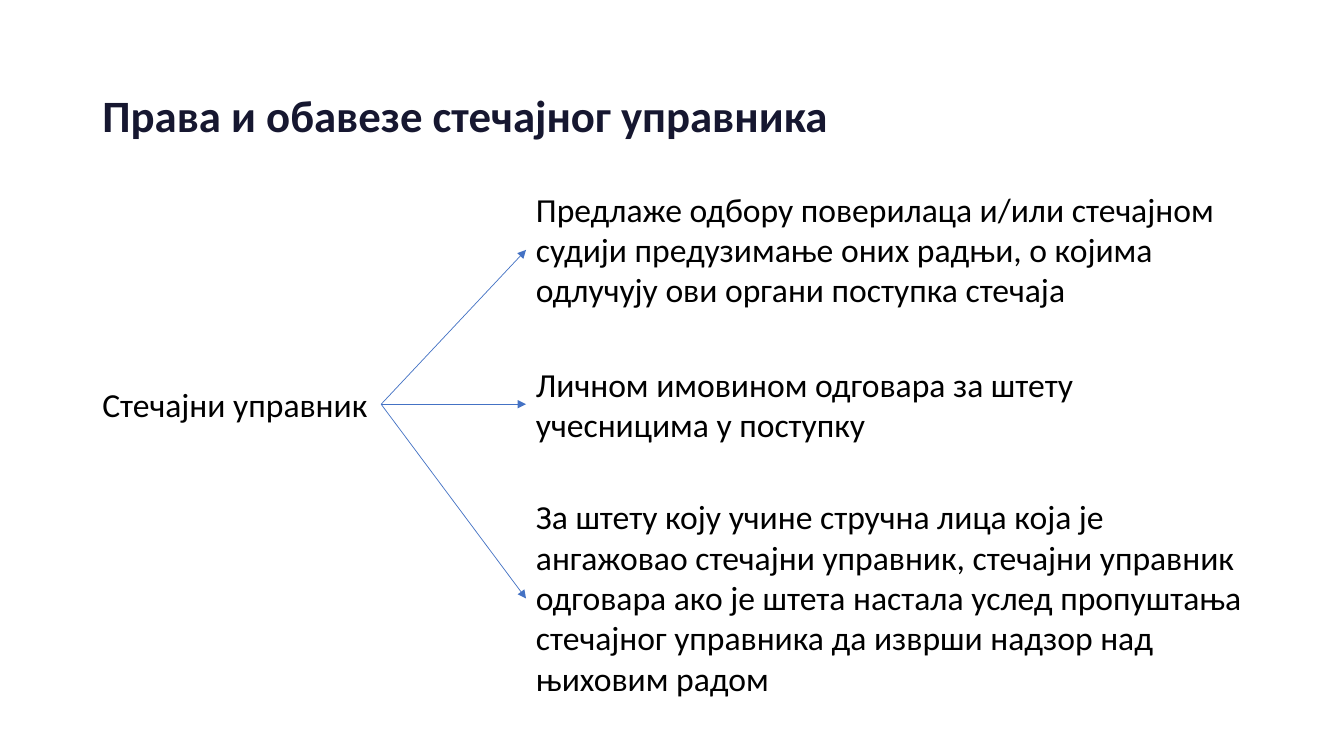
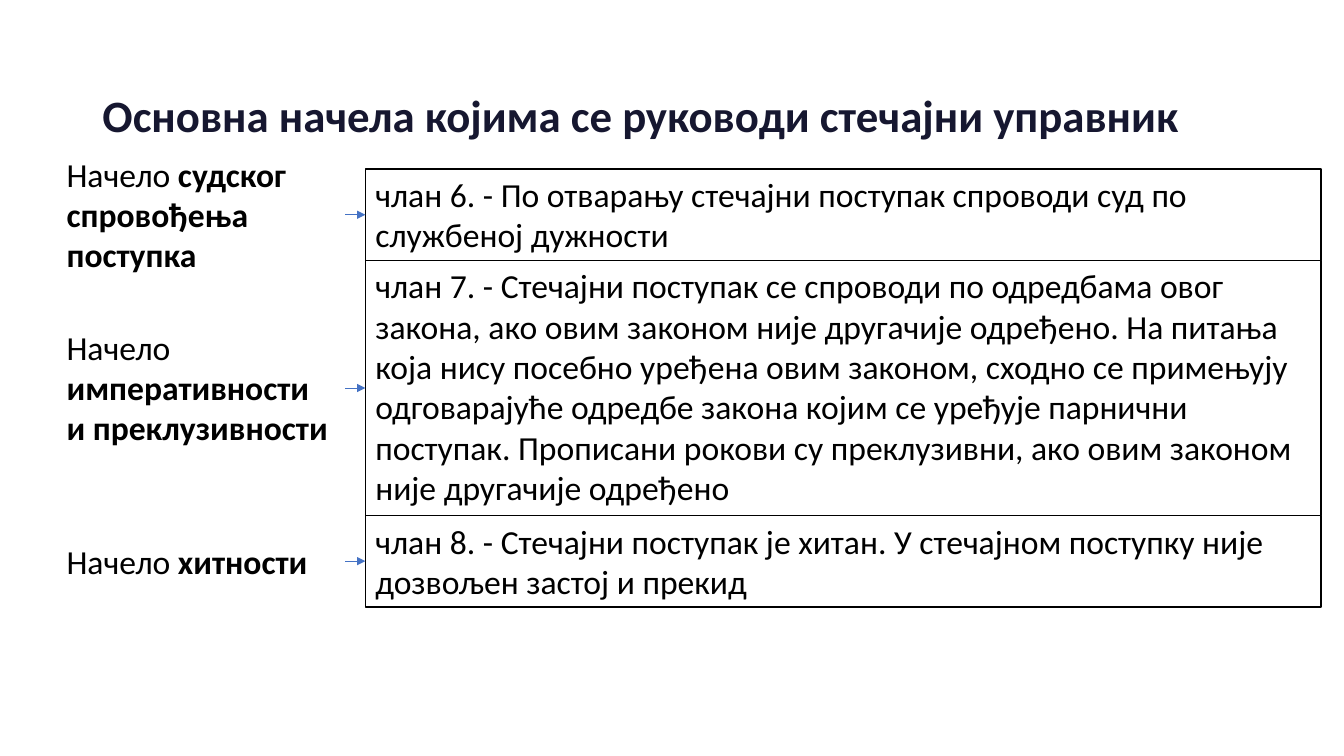
from lxml.etree import SubElement
from pptx import Presentation
from pptx.dml.color import RGBColor
from pptx.enum.shapes import MSO_CONNECTOR, MSO_SHAPE
from pptx.enum.text import MSO_ANCHOR, MSO_AUTO_SIZE, PP_ALIGN
from pptx.oxml.ns import qn
from pptx.util import Emu, Pt

PX = 9525
NAVY, BLACK, BLUE = "161730", "000000", "4472C4"
TITLE_FONT = {"name": "Calibri", "size": Pt(32), "bold": True}
BODY_FONT = {"name": "Calibri", "size": Pt(24)}
TITLE_BOX = (88, 83, 1104, 57)
LINE_HEIGHT, BOX_PADDING = 39, 9


def px(n):
    return Emu(int(n * PX))


def color(hex_text):
    return RGBColor.from_string(hex_text)


def set_font(font, fmt, hex_text):
    for key, value in fmt.items():
        setattr(font, key, value)
    font.color.rgb = color(hex_text)


def text_height(lines):
    return lines * LINE_HEIGHT + BOX_PADDING


def add_titled_slide(prs, title):
    slide = prs.slides.add_slide(prs.slide_layouts[5])
    sp = slide.shapes.title
    for key, value in zip(("left", "top", "width", "height"), TITLE_BOX):
        setattr(sp, key, px(value))
    tf = sp.text_frame
    tf.auto_size = MSO_AUTO_SIZE.NONE
    tf.vertical_anchor = MSO_ANCHOR.BOTTOM
    p = tf.paragraphs[0]
    p.alignment = PP_ALIGN.LEFT
    p.line_spacing = 0.9
    r = p.add_run()
    r.text = title
    set_font(r.font, TITLE_FONT, NAVY)
    return slide


def add_text(slide, x, middle, width, lines, text, strong="", framed=False, wrap=True):
    """Add text centred vertically on middle; strong is a bold ending."""
    height = text_height(lines)
    box = [px(n) for n in (x, middle - height / 2, width, height)]
    if framed:
        sp = slide.shapes.add_shape(MSO_SHAPE.RECTANGLE, *box)
        sp.shadow.inherit = False
        sp.fill.background()
        sp.line.color.rgb = color(BLACK)
        sp.line.width = Pt(1)
    else:
        sp = slide.shapes.add_textbox(*box)
    tf = sp.text_frame
    tf.word_wrap = wrap
    tf.vertical_anchor = MSO_ANCHOR.TOP
    p = tf.paragraphs[0]
    p.alignment = PP_ALIGN.LEFT
    for words, bold in ((text, False), (strong, True)):
        if words:
            r = p.add_run()
            r.text = words
            set_font(r.font, {**BODY_FONT, "bold": bold}, BLACK)
    return sp


def add_arrow(slide, source, target):
    """Join the right side of source to the left side of target."""
    line = slide.shapes.add_connector(MSO_CONNECTOR.STRAIGHT, 0, 0, 0, 0)
    line.begin_connect(source, 3)
    line.end_connect(target, 1)
    line.line.color.rgb = color(BLUE)
    line.line.width = Pt(0.5)
    SubElement(line.line._get_or_add_ln(), qn("a:tailEnd"), type="triangle")
    SubElement(line._element.spPr, qn("a:effectLst"))


def add_duty_tree(slide, x, middle, hub_text, duties):
    hub = add_text(slide, x, middle, 275, 1, hub_text, wrap=False)
    for offset, lines, text in duties:
        duty = add_text(slide, x + 413, middle + offset, 702, lines, text)
        add_arrow(slide, hub, duty)


def add_principles(slide, x, y, principles):
    """Stack framed articles without gaps, each with its principle at the left."""
    for label_lines, strong, lines, text in principles:
        middle = y + text_height(lines) / 2
        label = add_text(slide, x, middle, 275, label_lines, "Начело ", strong)
        article = add_text(slide, x + 294, middle, 910, lines, text, framed=True)
        add_arrow(slide, label, article)
        y += text_height(lines)


DUTIES = [
    (-147, 3, "Предлаже одбору поверилаца и/или стечајном судији предузимање оних "
              "радњи, о којима одлучују ови органи поступка стечаја"),
    (0, 2, "Личном имовином одговара за штету учесницима у поступку"),
    (185, 5, "За штету коју учине стручна лица која је ангажовао стечајни управник, "
             "стечајни управник одговара ако је штета настала услед пропуштања "
             "стечајног управника да изврши надзор над њиховим радом"),
]
PRINCIPLES = [
    (3, "судског спровођења поступка", 2,
     "члан 6. - По отварању стечајни поступак спроводи суд по службеној дужности"),
    (3, "императивности и преклузивности", 6,
     "члан 7. - Стечајни поступак се спроводи по одредбама овог закона, ако овим "
     "законом није другачије одређено. На питања која нису посебно уређена овим "
     "законом, сходно се примењују одговарајуће одредбе закона којим се уређује "
     "парнични поступак. Прописани рокови су преклузивни, ако овим законом није "
     "другачије одређено"),
    (1, "хитности", 2,
     "члан 8. - Стечајни поступак је хитан. У стечајном поступку није дозвољен "
     "застој и прекид"),
]


def main():
    prs = Presentation()
    prs.slide_width, prs.slide_height = px(1280), px(720)
    slide = add_titled_slide(prs, "Права и обавезе стечајног управника")
    add_duty_tree(slide, 88, 385, "Стечајни управник", DUTIES)
    slide = add_titled_slide(prs, "Основна начела којима се руководи стечајни управник")
    add_principles(slide, 54, 161, PRINCIPLES)
    prs.save("out.pptx")


if __name__ == "__main__":
    main()
